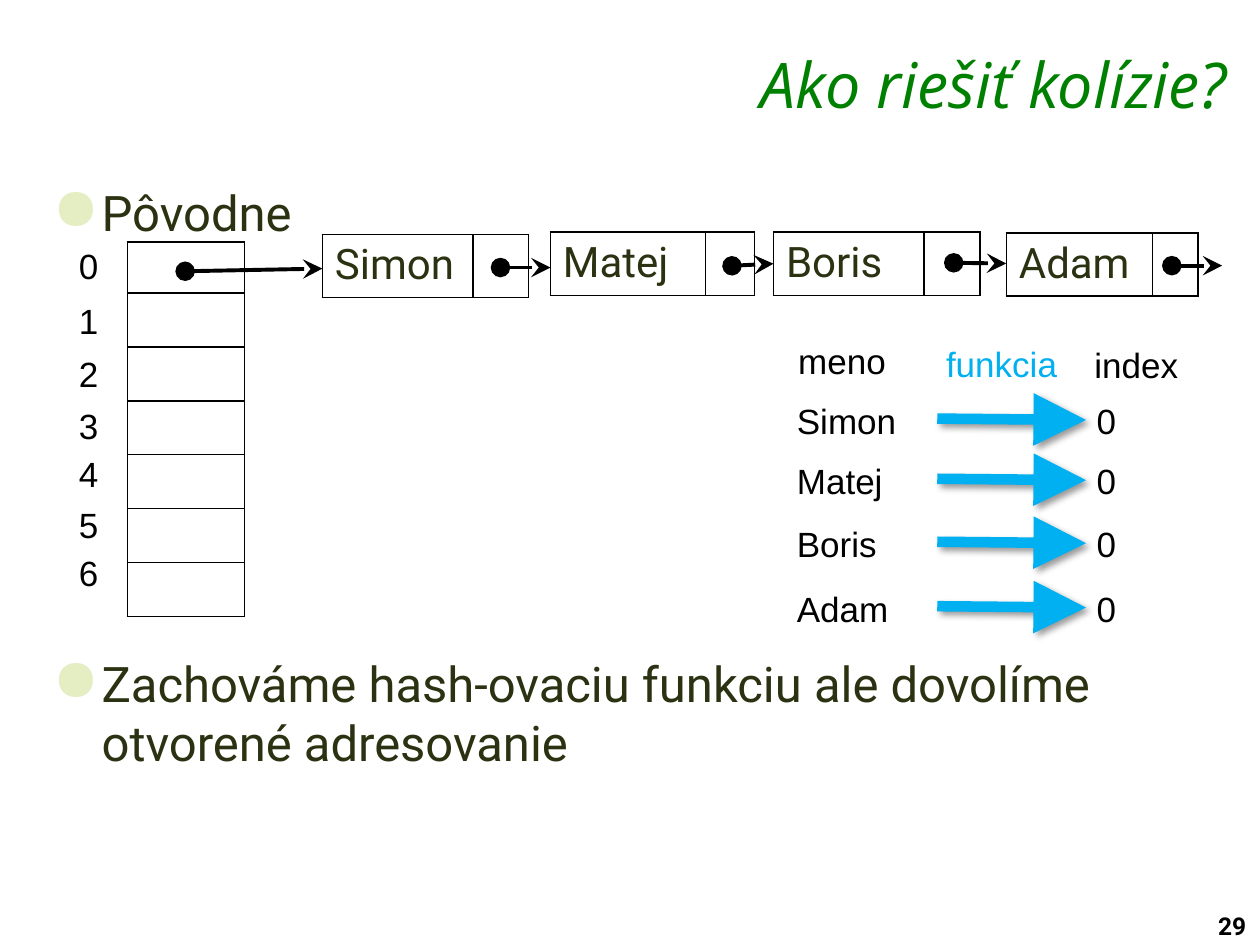
from pptx import Presentation
from pptx.dml.color import RGBColor as RGB
from pptx.enum.shapes import MSO_CONNECTOR as Conn
from pptx.enum.text import PP_ALIGN as Align
from pptx.oxml import parse_xml
from pptx.oxml.ns import nsdecls
from pptx.util import Pt

BLACK = RGB(0, 0, 0)
WHITE = RGB(255, 255, 255)
GREEN = RGB(0x00, 0x80, 0x00)
OLIVE = RGB(0x2B, 0x32, 0x12)
BLUE = RGB(0x00, 0xB0, 0xF0)
NS = nsdecls("a")

deck = Presentation()
deck.slide_width, deck.slide_height = Pt(720), Pt(540)
slide = deck.slides.add_slide(deck.slide_layouts[6])
shapes = slide.shapes


def put(text, x, y, w, h, size=20, face="Arial", color=BLACK, wrap=True):
    """Add a one-paragraph text box and return the paragraph."""
    frame = shapes.add_textbox(Pt(x), Pt(y), Pt(w), Pt(h)).text_frame
    frame.word_wrap = wrap
    frame.text = text
    para = frame.paragraphs[0]
    font = para.runs[0].font
    font.size, font.name, font.color.rgb = Pt(size), face, color
    return para


def link(x1, y1, x2, y2, color, width, ends, effect=""):
    """Add a line with large end marks and an optional effect."""
    line = shapes.add_connector(Conn.STRAIGHT, Pt(x1), Pt(y1), Pt(x2), Pt(y2))
    line.line.color.rgb, line.line.width = color, Pt(width)
    props = line._element.spPr
    stroke = line.line._get_or_add_ln()
    for tag, kind in ends.items():
        stroke.append(parse_xml(f'<a:{tag} {NS} type="{kind}" w="lg" len="lg"/>'))
    props.append(parse_xml(f"<a:effectLst {NS}>{effect}</a:effectLst>"))


# Title and slide number
title = put("Ako riešiť kolízie?", 165, 22.3, 543.5, 42, 36, "Open Sans", GREEN)
title.alignment = Align.RIGHT
title.runs[0].font.italic = True
page = put("29", 689, 517, 36.5, 24, 14, "Roboto")
page.runs[0].font.bold = True

# Bullets above and below the diagram
for text, y, h in [
    ("Pôvodne", 101, 40),
    ("Zachováme hash-ovaciu funkciu ale dovolíme otvorené adresovanie", 370, 75),
]:
    para = put(text, 23, y, 675, h, 28, "Roboto", OLIVE)
    props = para._p.get_or_add_pPr()
    props.set("marL", str(Pt(28)))
    props.set("indent", str(Pt(-28)))
    for mark in (
        f'<a:buClr {NS}><a:srgbClr val="E5EEC2"/></a:buClr>',
        f'<a:buSzPct {NS} val="120000"/>',
        f'<a:buChar {NS} char="●"/>',
    ):
        props.append(parse_xml(mark))

# Hash table and list nodes: left, top, column widths, row heights, name
grids = [
    (72.8, 138.3, [67], [29.2] + [30.8] * 6, ""),
    (184.2, 134, [86, 32], [36], "Simon"),
    (314.5, 132.7, [88.6, 28.1], [36], "Matej"),
    (442, 132.7, [86, 32], [36], "Boris"),
    (575, 133.2, [83.5, 26], [36], "Adam"),
]
for x, y, cols, rows, name in grids:
    frame = shapes.add_table(
        len(rows), len(cols), Pt(x), Pt(y), Pt(sum(cols)), Pt(sum(rows))
    )
    table = frame.table
    table.first_row = table.horz_banding = False
    for col, w in zip(table.columns, cols):
        col.width = Pt(w)
    for row, h in zip(table.rows, rows):
        row.height = Pt(h)
    for cell in table.iter_cells():
        props = cell._tc.get_or_add_tcPr()
        for side in "LRTB":
            props.append(parse_xml(
                f'<a:ln{side} {NS} w="{Pt(1)}"><a:solidFill>'
                f'<a:srgbClr val="{BLACK}"/></a:solidFill></a:ln{side}>'
            ))
        cell.fill.solid()
        cell.fill.fore_color.rgb = WHITE
    if name:
        cell = table.cell(0, 0)
        cell.text_frame.text = name
        font = cell.text_frame.paragraphs[0].runs[0].font
        font.size, font.name, font.color.rgb = Pt(24), "Roboto", OLIVE

# Slot numbers
for num, y in enumerate([136, 167.8, 198, 227.5, 255, 284.4, 311.4]):
    put(str(num), 38, y, 26, 31.5)

# Pointers along the chain
for x1, y1, x2, y2 in [
    (105.8, 155, 184.2, 153.5),
    (286, 152.9, 314.6, 152.9),
    (418.3, 151.9, 442, 150.7),
    (545, 150.2, 575, 150.6),
    (669.6, 151.8, 698.4, 151.8),
]:
    link(x1, y1, x2, y2, BLACK, 2.25, {"headEnd": "oval", "tailEnd": "stealth"})

# Mapping headings
for text, x, y, w, color in [
    ("meno", 449, 190.3, 65, BLACK),
    ("funkcia", 533.5, 192, 78.5, BLUE),
    ("index", 618.3, 192.5, 62.6, BLACK),
]:
    put(text, x, y, w, 31.5, color=color, wrap=False)

# Mapping rows: name, arrow, index
SHADOW = (
    f'<a:outerShdw blurRad="{Pt(4)}" dist="{Pt(3)}" dir="2700000" algn="tl" '
    'rotWithShape="0"><a:srgbClr val="000000"><a:alpha val="40000"/>'
    "</a:srgbClr></a:outerShdw>"
)
for name, y, w in [
    ("Simon", 224.8, 72),
    ("Matej", 259.2, 64),
    ("Boris", 295.2, 60.5),
    ("Adam", 332, 67),
]:
    put(name, 448.3, y, w, 31.5, wrap=False)
    put("0", 619.6, y, 26, 31.5, wrap=False)
    link(535.6, y + 14.4, 620.6, y + 15.2, BLUE, 6, {"tailEnd": "triangle"}, SHADOW)

deck.save("out.pptx")
